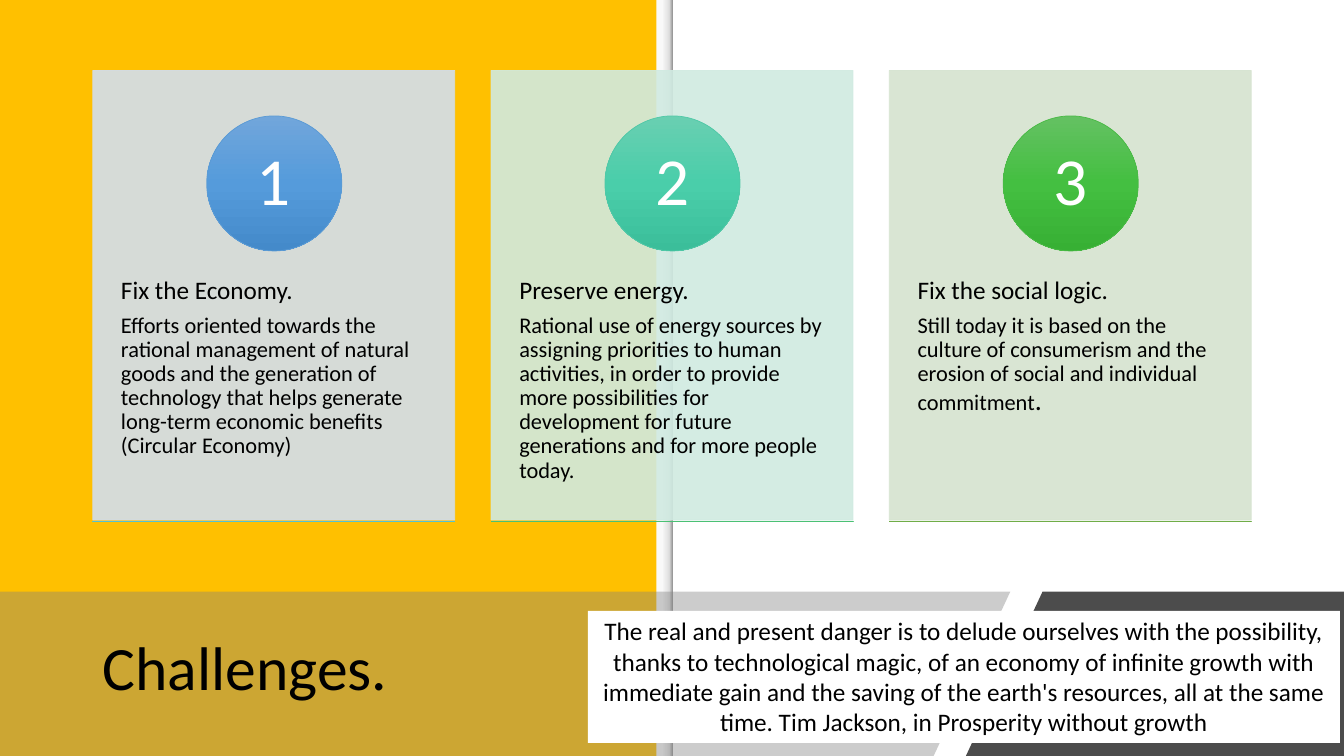
from lxml.etree import SubElement as Sub
from pptx import Presentation
from pptx.dml.color import RGBColor as RGB
from pptx.enum.shapes import MSO_SHAPE as Kind
from pptx.enum.text import MSO_ANCHOR as Anchor, PP_ALIGN as Align
from pptx.oxml.ns import qn
from pptx.util import Inches as In, Pt

TOP, WIDE, STEP = 0.7, 3.59, 3.95
LEFT = 0.92

# heading, body, closing mark, panel, rim, disc shades, base line, base shades
CARDS = [
    ("Fix the Economy.",
     "Efforts oriented towards the rational management of natural goods and the "
     "generation of technology that helps generate long-term economic benefits "
     "(Circular Economy)", "",
     "D2DEEF", "5B9BD5", ["71A6DB", "559BDB", "448ACA"],
     "55C3CF", ["6DCAD5", "4FC7D5", "3FB7C4"]),
    ("Preserve energy.",
     "Rational use of energy sources by assigning priorities to human activities, "
     "in order to provide more possibilities for development for future "
     "generations and for more people today.", "",
     "D0EAE1", "50C8A7", ["69CFB1", "4ACEAA", "3BBE9A"],
     "4BC174", ["66C885", "45C772", "37B764"]),
    ("Fix the social logic.",
     "Still today it is based on the culture of consumerism and the erosion of "
     "social and individual commitment", ".",
     "D5E3CF", "4ABA46", ["64C162", "44BF41", "37B034"],
     "70AD47", ["81B861", "6FB242", "62A336"]),
]
QUOTE = ("The real and present danger is to delude ourselves with the possibility, "
         "thanks to technological magic, of an economy of infinite growth with "
         "immediate gain and the saving of the earth's resources, all at the same "
         "time. Tim Jackson, in Prosperity without growth")


def tint(fill, hue):
    fill.solid()
    fill.fore_color.rgb = RGB.from_string(hue)


def fade(item, alpha):
    """Set the opacity, in percent, of every solid colour in a shape."""
    for node in item._element.spPr.iter(qn("a:srgbClr")):
        Sub(node, qn("a:alpha")).set("val", str(alpha * 1000))


def blend(item, stops, angle):
    """Fill with a gradient; angle runs clockwise."""
    item.fill.gradient()
    item.fill.gradient_angle = 360 - angle
    group = next(item._element.spPr.iter(qn("a:gsLst")))
    for old in list(group):
        group.remove(old)
    for place, hue in stops:
        stop = Sub(group, qn("a:gs"), pos=str(place * 1000))
        Sub(stop, qn("a:srgbClr"), val=hue)


def edge(item, hue=None):
    item.shadow.inherit = False
    if hue:
        tint(item.line.fill, hue)
        item.line.width = Pt(0.5)
    else:
        item.line.fill.background()


def block(slide, kind, box, hue=None, rim=None):
    item = slide.shapes.add_shape(kind, *map(In, box))
    if hue:
        tint(item.fill, hue)
    edge(item, rim)
    return item


def band(slide, points, hue, alpha):
    spots = [(In(x), In(y)) for x, y in points]
    pen = slide.shapes.build_freeform(*spots[0])
    pen.add_line_segments(spots[1:])
    item = pen.convert_to_shape()
    tint(item.fill, hue)
    edge(item)
    fade(item, alpha)


def inset(frame, side, end):
    frame.margin_left = frame.margin_right = In(side)
    frame.margin_top = frame.margin_bottom = In(end)


def frame_at(slide, box, anchor=Anchor.TOP):
    frame = slide.shapes.add_textbox(*map(In, box)).text_frame
    frame.word_wrap = True
    frame.vertical_anchor = anchor
    return frame


def write(par, text, size, hue="000000", align=Align.LEFT, pitch=0.9):
    par.text = text
    par.alignment = align
    par.line_spacing = pitch
    par.font.name = "Calibri"
    par.font.size = Pt(size)
    par.font.color.rgb = RGB.from_string(hue)


def card(slide, rank, head, body, mark, panel, rim, disc, base, shades):
    x = LEFT + rank * STEP
    back = block(slide, Kind.RECTANGLE, (x, TOP, WIDE, 4.46), panel, panel)
    fade(back, 90)

    # Heading and body
    frame = frame_at(slide, (x, 2.4, WIDE, 2.68))
    inset(frame, 0.28, 0.36)
    first = frame.paragraphs[0]
    write(first, head, 18)
    first.space_after = Pt(6)
    last = frame.add_paragraph()
    write(last, body, 16)
    if mark:
        run = last.add_run()
        run.text = mark
        run.font.size = Pt(20)

    # Numbered disc
    spot = block(slide, Kind.OVAL, (x + 1.13, 1.15, 1.34, 1.34), rim=rim)
    blend(spot, zip((0, 50, 100), disc), 90)
    frame = frame_at(slide, (x + 1.32, 1.35, 0.95, 0.95), Anchor.MIDDLE)
    inset(frame, 0.1, 0.01)
    write(frame.paragraphs[0], str(rank + 1), 48, "FFFFFF", Align.CENTER)

    # Base line
    foot = block(slide, Kind.RECTANGLE, (x, 5.17, WIDE, 0), rim=base)
    blend(foot, zip((0, 50, 100), shades), 90)


def main():
    deck = Presentation()
    deck.slide_width, deck.slide_height = In(13.33), In(7.5)
    slide = deck.slides.add_slide(deck.slide_layouts[6])

    # Backdrop with a shaded fold
    block(slide, Kind.RECTANGLE, (0, 0, 6.67, 7.5), "FFC000")
    fold = block(slide, Kind.RECTANGLE, (2.84, 3.67, 7.5, 0.16))
    fold.rotation = 90
    blend(fold, [(0, "F9F9F9"), (36, "F9F9F9"), (80, "DEDEDE"), (100, "999999")], 270)

    # Title band
    band(slide, [(0, 5.87), (10.02, 5.87), (9.26, 7.5), (0, 7.5)], "808080", 40)
    title = frame_at(slide, (LEFT, 6.05, 8.44, 1.2), Anchor.MIDDLE)
    write(title.paragraphs[0], "Challenges.", 44)
    band(slide, [(10.34, 5.87), (13.33, 5.87), (13.33, 7.5), (9.58, 7.5)],
         "000000", 70)

    # Cards
    for rank, data in enumerate(CARDS):
        card(slide, rank, *data)

    # Quote
    quote = block(slide, Kind.RECTANGLE, (5.83, 6.06, 7.46, 1.31), "FFFFFF")
    frame = quote.text_frame
    frame.word_wrap = True
    frame.vertical_anchor = Anchor.TOP
    write(frame.paragraphs[0], QUOTE, 18, align=Align.CENTER, pitch=1.0)

    deck.save("out.pptx")


if __name__ == "__main__":
    main()
